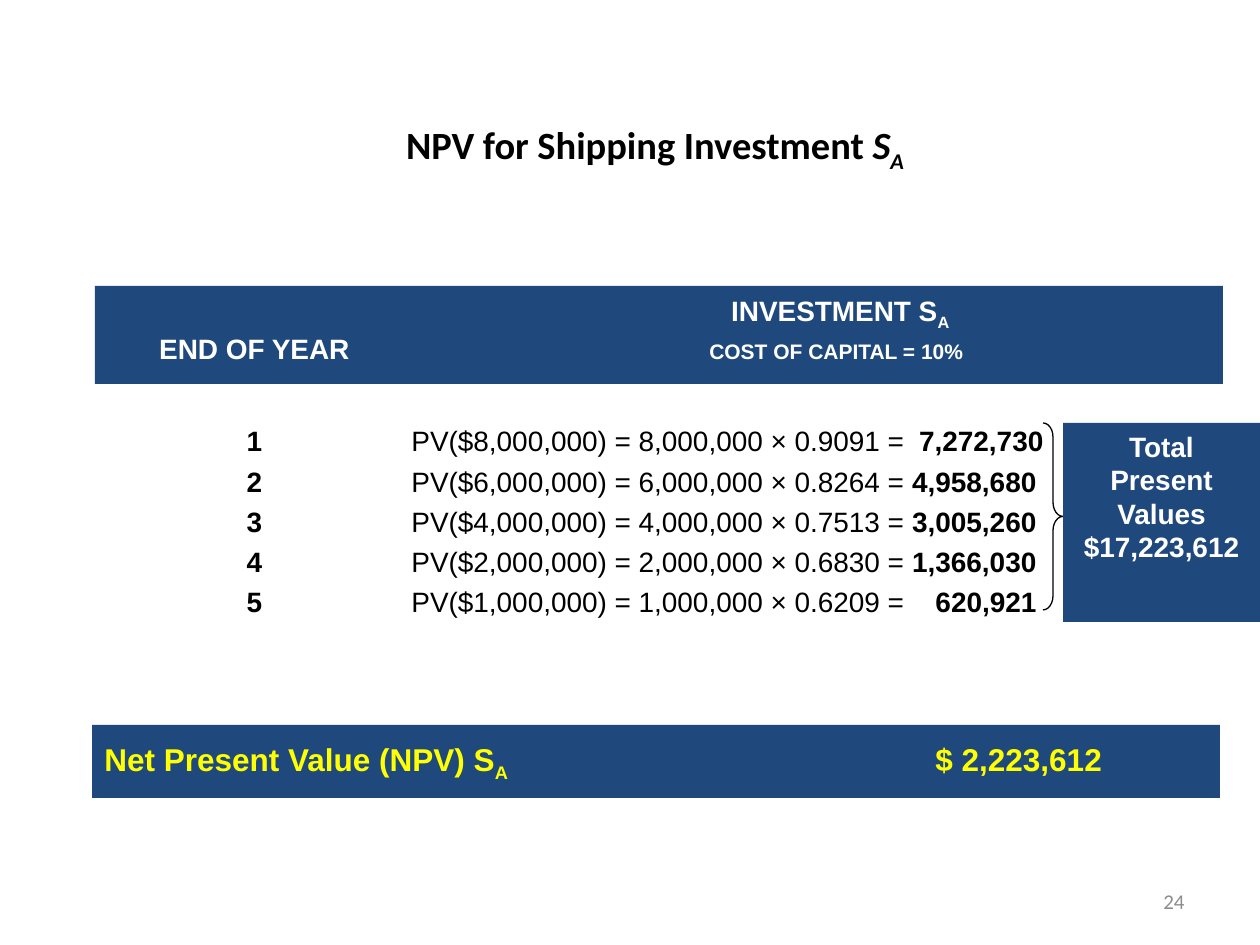
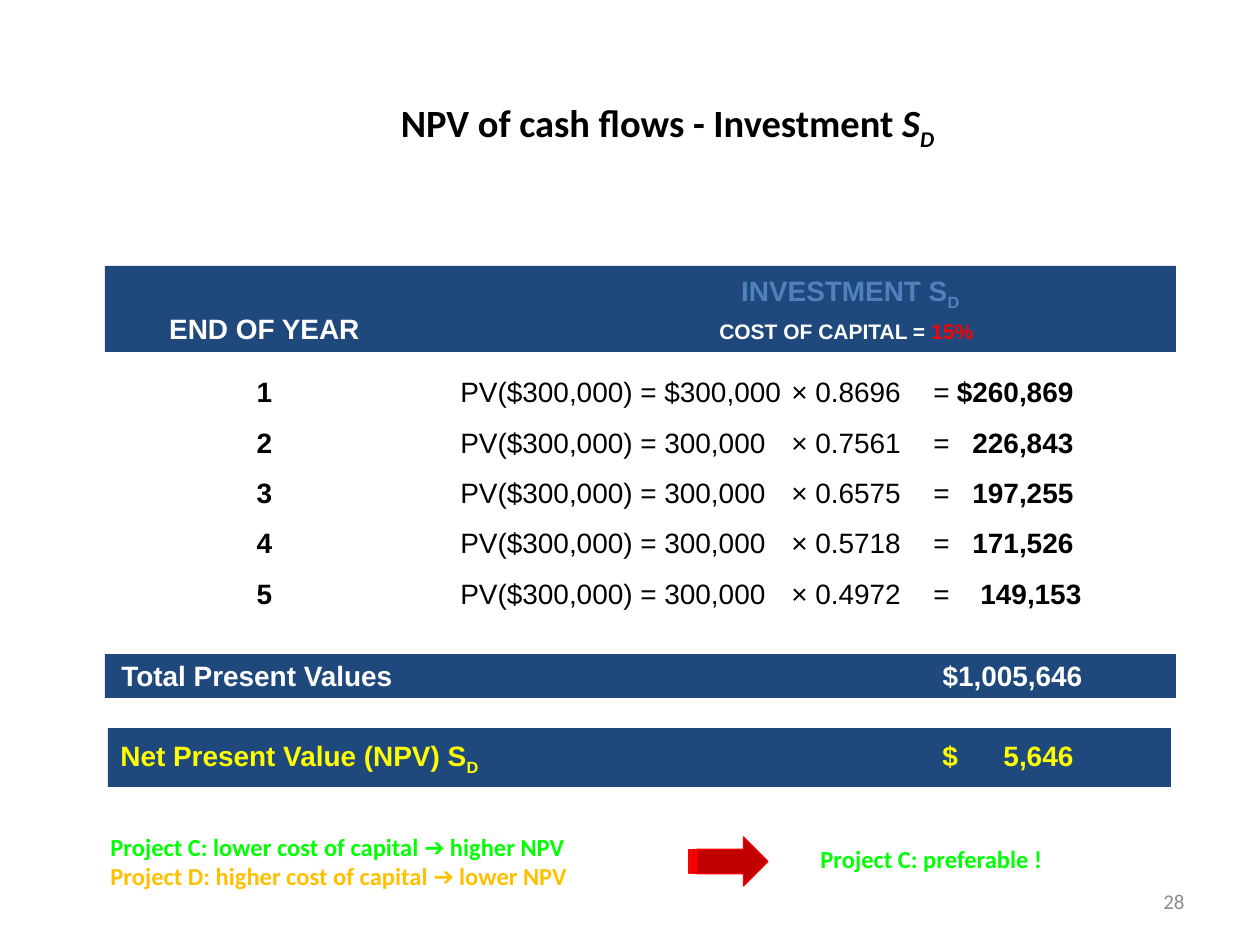
"""Build two slides that work out the net present value of shipping investments."""
from dataclasses import dataclass

from lxml import etree
from pptx import Presentation
from pptx.dml.color import RGBColor
from pptx.enum.shapes import MSO_SHAPE
from pptx.enum.text import MSO_ANCHOR, PP_ALIGN
from pptx.oxml.ns import qn
from pptx.util import Emu, Pt

RECTANGLE = MSO_SHAPE.RECTANGLE
BRACE = MSO_SHAPE.RIGHT_BRACE
ARROW = MSO_SHAPE.STRIPED_RIGHT_ARROW
LEFT, CENTER, RIGHT = PP_ALIGN.LEFT, PP_ALIGN.CENTER, PP_ALIGN.RIGHT
TOP, MIDDLE, BOTTOM = MSO_ANCHOR.TOP, MSO_ANCHOR.MIDDLE, MSO_ANCHOR.BOTTOM
PX_PER_INCH = 126


@dataclass(frozen=True)
class Theme:
    navy: str = "1F497D"
    blue: str = "4F81BD"
    white: str = "FFFFFF"
    black: str = "000000"
    gray: str = "8C8C8C"
    yellow: str = "FFFF00"
    green: str = "00FF00"
    amber: str = "FFC000"
    red: str = "FF0000"
    dark_red: str = "C00000"
    heading_font: str = "Calibri"
    body_font: str = "Arial"
    title: int = 22
    result: int = 18
    body: int = 16
    note: int = 14
    small: int = 12


@dataclass(frozen=True)
class Span:
    text: str
    size: int = None
    color: str = None
    bold: bool = True
    italic: bool = False
    subscript: bool = False


@dataclass(frozen=True)
class Line:
    spans: tuple
    tabs: tuple = ()


THEME = Theme()


def px(length):
    return Emu(round(length * 914400 / PX_PER_INCH))


def rgb(color):
    return RGBColor.from_string(color)


def set_tabs(paragraph, tabs):
    stops = etree.SubElement(paragraph._p.get_or_add_pPr(), qn("a:tabLst"))
    for position, kind in tabs:
        etree.SubElement(stops, qn("a:tab"), pos=str(px(position)), algn=kind)


def write_text(holder, lines, *, size=THEME.body, color=THEME.white,
               font=THEME.body_font, align=LEFT, anchor=TOP, spacing=None):
    frame = holder.text_frame
    frame.word_wrap = True
    frame.vertical_anchor = anchor
    for index, line in enumerate(lines):
        paragraph = frame.add_paragraph() if index else frame.paragraphs[0]
        paragraph.alignment = align
        if spacing:
            paragraph.line_spacing = spacing
        if line.tabs:
            set_tabs(paragraph, line.tabs)
        for span in line.spans:
            run = paragraph.add_run()
            run.text = span.text
            run.font.name = font
            run.font.size = Pt(span.size or size)
            run.font.bold = span.bold
            run.font.italic = span.italic
            run.font.color.rgb = rgb(span.color or color)
            if span.subscript:
                run._r.get_or_add_rPr().set("baseline", "-25000")


def add_text(slide, box, lines, **style):
    write_text(slide.shapes.add_textbox(*map(px, box)), lines, **style)


def add_figure(slide, kind, box, fill=None, line=None):
    figure = slide.shapes.add_shape(kind, *map(px, box))
    figure.shadow.inherit = False
    if fill:
        figure.fill.solid()
        figure.fill.fore_color.rgb = rgb(fill)
    else:
        figure.fill.background()
    if line:
        figure.line.color.rgb = rgb(line)
        figure.line.width = Pt(0.75)
    else:
        figure.line.fill.background()
    return figure


def add_band(slide, box, lines=(), **style):
    band = add_figure(slide, RECTANGLE, box, THEME.navy)
    if lines:
        write_text(band, lines, **style)


def add_frame(presentation, title_box, title, letter, page):
    slide = presentation.slides.add_slide(presentation.slide_layouts[6])
    heading = Line((Span(title), Span("S", italic=True),
                    Span(letter, italic=True, subscript=True)))
    add_text(slide, title_box, [heading], size=THEME.title, color=THEME.black,
             font=THEME.heading_font, align=CENTER, anchor=MIDDLE)
    add_text(slide, (903, 876, 294, 50), [Line((Span(page, bold=False),))],
             size=THEME.small, color=THEME.gray, font=THEME.heading_font,
             align=RIGHT, anchor=MIDDLE)
    return slide


def add_header(slide, band_box, text_box, letter, rate, name_color, rate_color):
    tabs = ((189, "ctr"), (771, "ctr"))
    add_band(slide, band_box)
    add_text(slide, text_box, [
        Line((Span("\t\t INVESTMENT S", color=name_color),
              Span(letter, color=name_color, subscript=True)), tabs),
        Line((Span("\tEND OF YEAR\t"),
              Span("COST OF CAPITAL = ", THEME.small),
              Span(rate, THEME.small, rate_color)), tabs),
    ])


def add_cash_flows(slide, box, flows, tabs, spacing):
    lines = [
        Line((Span(f"\t{year}\t"), Span(formula, bold=False), Span(f"\t{value}")),
             tabs + ((value_end, "r"),))
        for year, (formula, value, value_end) in enumerate(flows, 1)
    ]
    add_text(slide, box, lines, color=THEME.black, spacing=spacing)


def add_npv_band(slide, box, letter, amount, tabs, size):
    add_band(slide, box, [
        Line((Span("Net Present Value (NPV) S"), Span(letter, subscript=True),
              Span(f"\t{amount}")), tabs)
    ], size=size, color=THEME.yellow, anchor=MIDDLE)


def add_note(slide, box, *statements):
    add_text(slide, box, [Line((Span(text, color=color),)) for text, color in statements],
             size=THEME.note, font=THEME.heading_font, anchor=BOTTOM)


def build_investment_a(presentation):
    slide = add_frame(presentation, (105, 118, 1105, 59),
                      "NPV for Shipping Investment ", "A ", "24")
    add_header(slide, (95, 286, 1128, 98), (53, 287, 1166, 81),
               "A", "10%", THEME.white, THEME.white)
    flows = [
        ("PV($8,000,000) = 8,000,000 × 0.9091 =", "7,272,730", 1002),
        ("PV($6,000,000) = 6,000,000 × 0.8264 =", "4,958,680", 995),
        ("PV($4,000,000) = 4,000,000 × 0.7513 =", "3,005,260", 995),
        ("PV($2,000,000) = 2,000,000 × 0.6830 =", "1,366,030", 995),
        ("PV($1,000,000) = 1,000,000 × 0.6209 =", "620,921", 995),
    ]
    add_cash_flows(slide, (29, 411, 1188, 217), flows,
                   ((213, "ctr"), (370, "l")), 1.2)
    add_npv_band(slide, (92, 725, 1128, 73), "A", "$ 2,223,612",
                 ((831, "l"),), THEME.result)
    brace = add_figure(slide, BRACE, (1043, 423, 20, 187), line=THEME.black)
    brace.adjustments[0] = 0.71
    add_band(slide, (1063, 423, 197, 199),
             [Line((Span("Total Present Values $17,223,612"),))], align=CENTER)


def build_investment_d(presentation):
    slide = add_frame(presentation, (105, 96, 1125, 59),
                      "NPV of cash flows - Investment ", "D", "28")
    add_header(slide, (105, 266, 1071, 86), (63, 267, 1103, 81),
               "D", "15%", THEME.blue, THEME.red)
    flows = [
        ("PV($300,000) = $300,000\t× 0.8696\t=", "$260,869", 1022),
        ("PV($300,000) = 300,000\t× 0.7561\t=", "226,843", 1022),
        ("PV($300,000) = 300,000\t× 0.6575\t=", "197,255", 1022),
        ("PV($300,000) = 300,000\t× 0.5718\t=", "171,526", 1022),
        ("PV($300,000) = 300,000\t× 0.4972\t=", "149,153", 1030),
    ]
    add_cash_flows(slide, (39, 352, 1188, 266), flows,
                   ((213, "ctr"), (409, "l"), (740, "l"), (882, "l")), 1.5)
    add_band(slide, (105, 654, 1071, 44))
    add_text(slide, (40, 652, 1188, 46), [
        Line((Span("\tTotal Present Values\t$1,005,646"),), ((69, "l"), (1030, "r")))
    ])
    add_npv_band(slide, (108, 728, 1063, 59), "D", "$\t5,646",
                 ((822, "l"), (953, "r")), THEME.body)
    add_note(slide, (98, 825, 581, 72),
             ("Project C: lower cost of capital ➔ higher NPV", THEME.green),
             ("Project D: higher cost of capital ➔ lower NPV", THEME.amber))
    add_note(slide, (808, 837, 295, 43), ("Project C: preferable !", THEME.green))
    add_figure(slide, ARROW, (689, 837, 79, 49), THEME.dark_red, THEME.red)


def main():
    presentation = Presentation()
    presentation.slide_width = px(1260)
    presentation.slide_height = px(945)
    build_investment_a(presentation)
    build_investment_d(presentation)
    presentation.save("out.pptx")


if __name__ == "__main__":
    main()
